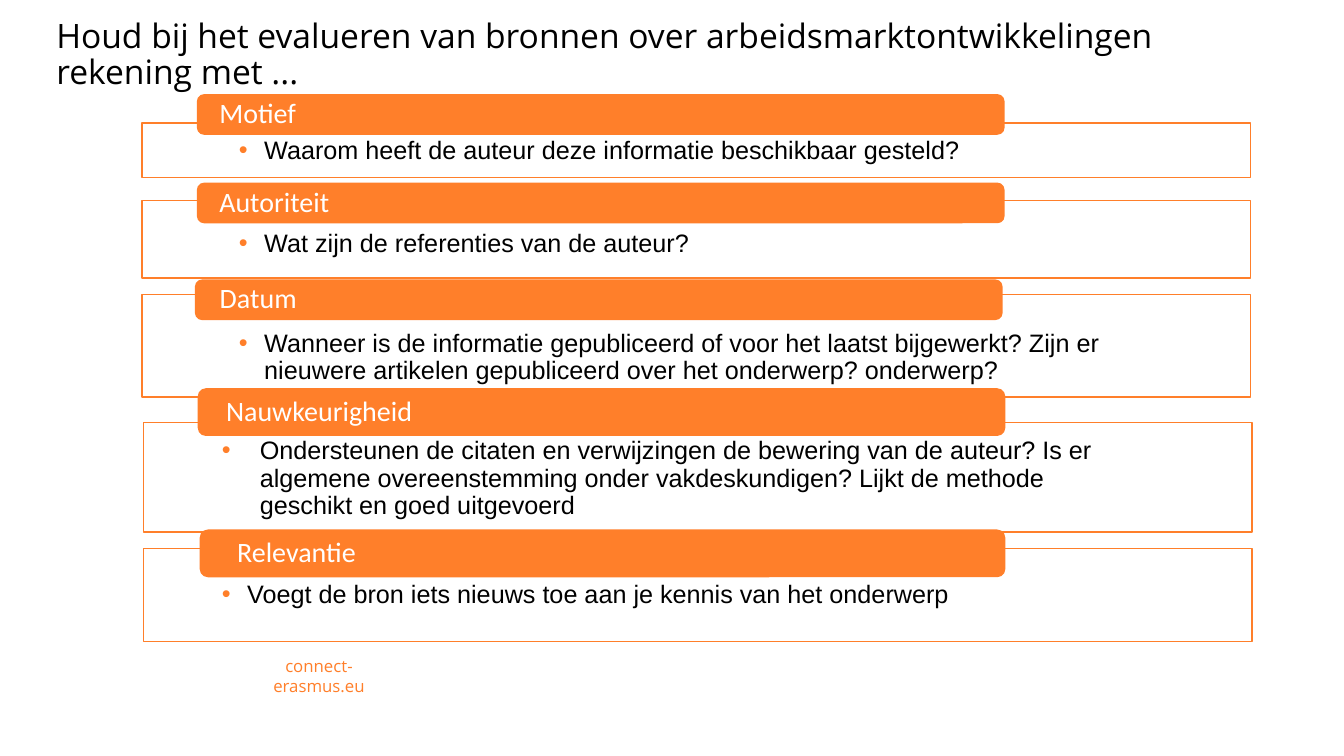
from lxml import etree
from pptx import Presentation
from pptx.dml.color import RGBColor
from pptx.enum.shapes import MSO_SHAPE
from pptx.enum.text import MSO_ANCHOR, PP_ALIGN
from pptx.oxml.ns import qn
from pptx.util import Cm, Pt

RECT, ROUND = MSO_SHAPE.RECTANGLE, MSO_SHAPE.ROUNDED_RECTANGLE
TOP, MIDDLE, BOTTOM = MSO_ANCHOR.TOP, MSO_ANCHOR.MIDDLE, MSO_ANCHOR.BOTTOM
LEFT, CENTER = PP_ALIGN.LEFT, PP_ALIGN.CENTER

COLORS = {"orange": "FF7F2A", "white": "FFFFFF", "black": "000000"}

ROWS = [
    {"name": "Motief", "text": "Waarom heeft de auteur deze informatie beschikbaar gesteld?",
     "box": (3.58, 3.1, 27.94, 1.37), "tab": (1.4, -0.71, 20.32, 0.99),
     "pad": 0.5, "inset": (2.44, 0.36, 2.44), "hang": 0.64},
    {"name": "Autoriteit", "text": "Wat zijn de referenties van de auteur?",
     "box": (3.58, 5.05, 27.94, 1.96), "tab": (1.4, -0.43, 20.32, 0.99),
     "pad": 0.5, "inset": (2.44, 0.77, 2.44), "hang": 0.64},
    {"name": "Datum",
     "text": "Wanneer is de informatie gepubliceerd of voor het laatst bijgewerkt? "
             "Zijn er nieuwere artikelen gepubliceerd over het onderwerp? onderwerp?",
     "box": (3.58, 7.42, 27.94, 2.59), "tab": (1.35, -0.36, 20.32, 0.99),
     "pad": 0.56, "inset": (2.44, 0.92, 2.44), "hang": 0.64},
    {"name": "Nauwkeurigheid",
     "text": "Ondersteunen de citaten en verwijzingen de bewering van de auteur? "
             "Is er algemene overeenstemming onder vakdeskundigen? "
             "Lijkt de methode geschikt en goed uitgevoerd",
     "box": (3.61, 10.64, 27.94, 2.77), "tab": (1.39, -0.84, 20.32, 1.17),
     "pad": 0.64, "inset": (1.98, 0.4, 2.9), "hang": 0.96},
    {"name": "Relevantie", "text": "Voegt de bron iets nieuws toe aan je kennis van het onderwerp",
     "box": (3.61, 13.82, 27.94, 2.34), "tab": (1.44, -0.46, 20.27, 1.17),
     "pad": 0.87, "inset": (1.98, 0.84, 2.9), "hang": 0.64},
]


def paint(name):
    """Return the named colour."""
    return RGBColor.from_string(COLORS[name])


def dot(para, hang):
    """Give a paragraph an orange bullet with a hanging indent."""
    props = para._p.get_or_add_pPr()
    props.set("marL", str(Cm(hang)))
    props.set("indent", str(-Cm(hang)))
    tint = etree.SubElement(props, qn("a:buClr"))
    etree.SubElement(tint, qn("a:srgbClr"), val=COLORS["orange"])
    etree.SubElement(props, qn("a:buFont"), typeface="Arial")
    etree.SubElement(props, qn("a:buChar"), char="•")


def write(shape, text, font, size, color, inset, anchor, align=LEFT, space=0.9, hang=None):
    """Set one paragraph of text in a shape."""
    frame = shape.text_frame
    frame.word_wrap = True
    frame.vertical_anchor = anchor
    frame.margin_left, frame.margin_top, frame.margin_right, frame.margin_bottom = map(Cm, inset)
    para = frame.paragraphs[0]
    if hang:
        dot(para, hang)
    para.alignment = align
    para.line_spacing = space
    run = para.add_run()
    run.text = text
    run.font.name = font
    run.font.size = Pt(size)
    run.font.color.rgb = paint(color)


def block(slide, kind, box, fill):
    """Add a filled shape with an orange outline."""
    shape = slide.shapes.add_shape(kind, *map(Cm, box))
    shape.shadow.inherit = False
    shape.fill.solid()
    shape.fill.fore_color.rgb = paint(fill)
    shape.line.color.rgb = paint("orange")
    shape.line.width = Pt(1)
    return shape


def topic(slide, box, row):
    """Draw a framed question with its tab on the upper edge."""
    left, top, _, _ = box
    panel = block(slide, RECT, box, "white")
    write(panel, row["text"], "Arial", 18, "black", (*row["inset"], 0), TOP, hang=row["hang"])
    across, down, width, height = row["tab"]
    tab = block(slide, ROUND, (left + across, top + down, width, height), "orange")
    tab.adjustments[0] = 0.167
    write(tab, row["name"], "Calibri", 20, "white", (row["pad"], 0, 0.84, 0), MIDDLE)


def title(slide, box):
    """Place the heading."""
    head = slide.shapes.add_textbox(*map(Cm, box))
    write(head, "Houd bij het evalueren van bronnen over arbeidsmarktontwikkelingen rekening met ...",
          "Open Sans", 24, "black", (0.25, 0.13, 0.25, 0.13), BOTTOM)


def footer(slide, box):
    """Place the web address."""
    foot = slide.shapes.add_textbox(*map(Cm, box))
    write(foot, "connect-erasmus.eu", "Open Sans", 12, "orange",
          (0.25, 0.13, 0.25, 0.13), MIDDLE, CENTER, 1.0)


def main():
    """Build and save the slide."""
    deck = Presentation()
    deck.slide_width, deck.slide_height = Cm(33.87), Cm(19.05)
    slide = deck.slides.add_slide(deck.slide_layouts[6])
    title(slide, (1.17, 0.28, 29.21, 2.16))
    for row in ROWS:
        topic(slide, row["box"], row)
    footer(slide, (5.84, 16.66, 4.4, 0.76))
    deck.save("out.pptx")


if __name__ == "__main__":
    main()
